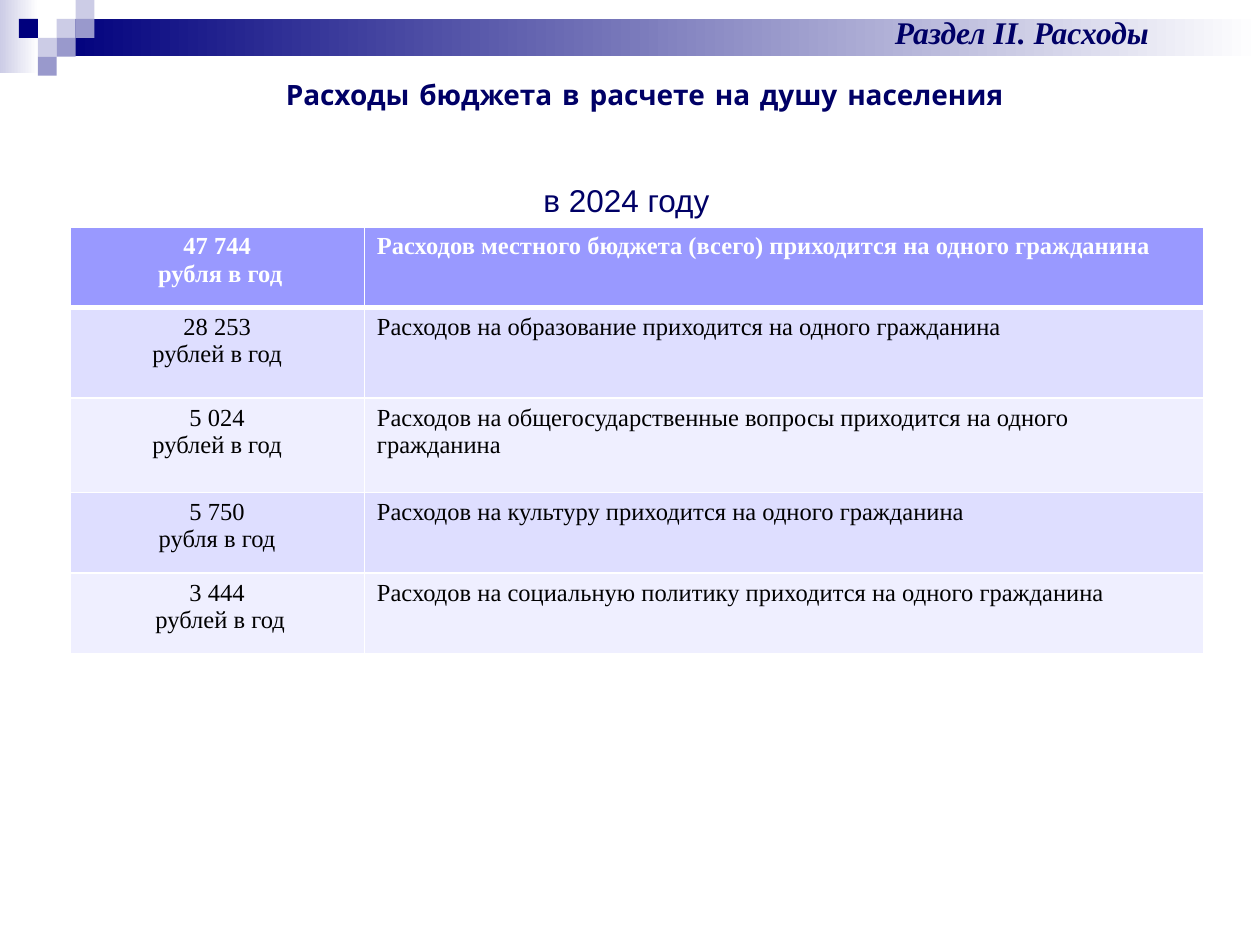
from lxml.etree import SubElement
from pptx import Presentation
from pptx.dml.color import RGBColor
from pptx.enum.shapes import MSO_SHAPE
from pptx.enum.text import MSO_ANCHOR, PP_ALIGN
from pptx.oxml.ns import qn
from pptx.util import Pt


def color(value):
    return RGBColor.from_string(value)


def add_bar(left, top, width, height, start, end=None):
    bar = page.shapes.add_shape(MSO_SHAPE.RECTANGLE, Pt(left), Pt(top), Pt(width), Pt(height))
    bar.shadow.inherit = False
    bar.line.fill.background()
    if end is None:
        bar.fill.solid()
        bar.fill.fore_color.rgb = color(start)
        return
    bar.fill.gradient()
    bar.fill.gradient_angle = 0
    for stop, shade in zip(bar.fill.gradient_stops, (start, end)):
        stop.color.rgb = color(shade)


deck = Presentation()
deck.slide_width, deck.slide_height = Pt(720), Pt(540)
page = deck.slides.add_slide(deck.slide_layouts[6])

# Header bands and mosaic squares
NAVY, PALE, MID = "00007D", "CCCCE6", "9999CC"
add_bar(0, 0, 22, 42, PALE, "FFFFFF")
add_bar(32.4, 10.8, 687.6, 21.4, NAVY, "FFFFFF")
SQUARE = 10.8
squares = [(3, 1, PALE), (4, 0, PALE), (4, 1, MID), (2, 2, PALE),
           (1, 1, NAVY), (3, 2, MID), (2, 3, MID)]
for column, row, shade in squares:
    add_bar(column * SQUARE, row * SQUARE, SQUARE, SQUARE, shade)

# Headings: text, left, top, width, height, font, size, bold, italic, anchor
headings = [
    ("в 2024 году", -2, 94.5, 720, 39, "Arial", 18, False, False, MSO_ANCHOR.MIDDLE),
    ("Раздел II. Расходы", 451, 3.6, 266, 29, "Times New Roman", 18, True, True, MSO_ANCHOR.TOP),
    ("Расходы бюджета в расчете на душу населения", 63, 41, 611, 27,
     "Comic Neue", 16, True, False, MSO_ANCHOR.TOP),
]
for text, left, top, width, height, font, size, bold, italic, anchor in headings:
    box = page.shapes.add_textbox(Pt(left), Pt(top), Pt(width), Pt(height))
    box.text_frame.word_wrap = True
    box.text_frame.vertical_anchor = anchor
    para = box.text_frame.paragraphs[0]
    para.text = text
    para.alignment = PP_ALIGN.CENTER
    para.font.name, para.font.size = font, Pt(size)
    para.font.bold, para.font.italic = bold, italic
    para.font.color.rgb = color("000066")

# Spending per resident
spending = [
    ("47 744\n рубля в год", "Расходов местного бюджета (всего) приходится на одного гражданина"),
    ("28 253\nрублей в год", "Расходов на образование приходится на одного гражданина"),
    ("5 024\nрублей в год",
     "Расходов на общегосударственные вопросы приходится на одного гражданина"),
    ("5 750\nрубля в год", "Расходов на культуру приходится на одного гражданина"),
    ("3 444\n рублей в год", "Расходов на социальную политику приходится на одного гражданина"),
]
row_heights = [46, 52, 54, 46, 46]
table = page.shapes.add_table(5, 2, Pt(39.9), Pt(129.6), Pt(648), Pt(sum(row_heights))).table
table.columns[0].width, table.columns[1].width = Pt(168.3), Pt(479.7)

for index, (texts, height) in enumerate(zip(spending, row_heights)):
    table.rows[index].height = Pt(height)
    header = index == 0
    fill = "9999FF" if header else ("DEDEFF" if index % 2 else "EFEFFF")
    for column, text in enumerate(texts):
        cell = table.cell(index, column)
        cell.text = text
        for para in cell.text_frame.paragraphs:
            para.alignment = PP_ALIGN.LEFT if column else PP_ALIGN.CENTER
            para.font.name, para.font.size = "Times New Roman", Pt(14)
            para.font.bold = header
            para.font.color.rgb = color("FFFFFF" if header else "000000")

        # White borders, thicker under the header; they precede the fill
        properties = cell._tc.get_or_add_tcPr()
        for side in ("lnL", "lnR", "lnT", "lnB"):
            thick = (index, side) in ((0, "lnB"), (1, "lnT"))
            border = SubElement(properties, qn("a:" + side), w=str(Pt(3 if thick else 1)))
            paint = SubElement(border, qn("a:solidFill"))
            SubElement(paint, qn("a:srgbClr"), val="FFFFFF")
        cell.fill.solid()
        cell.fill.fore_color.rgb = color(fill)

deck.save("out.pptx")
